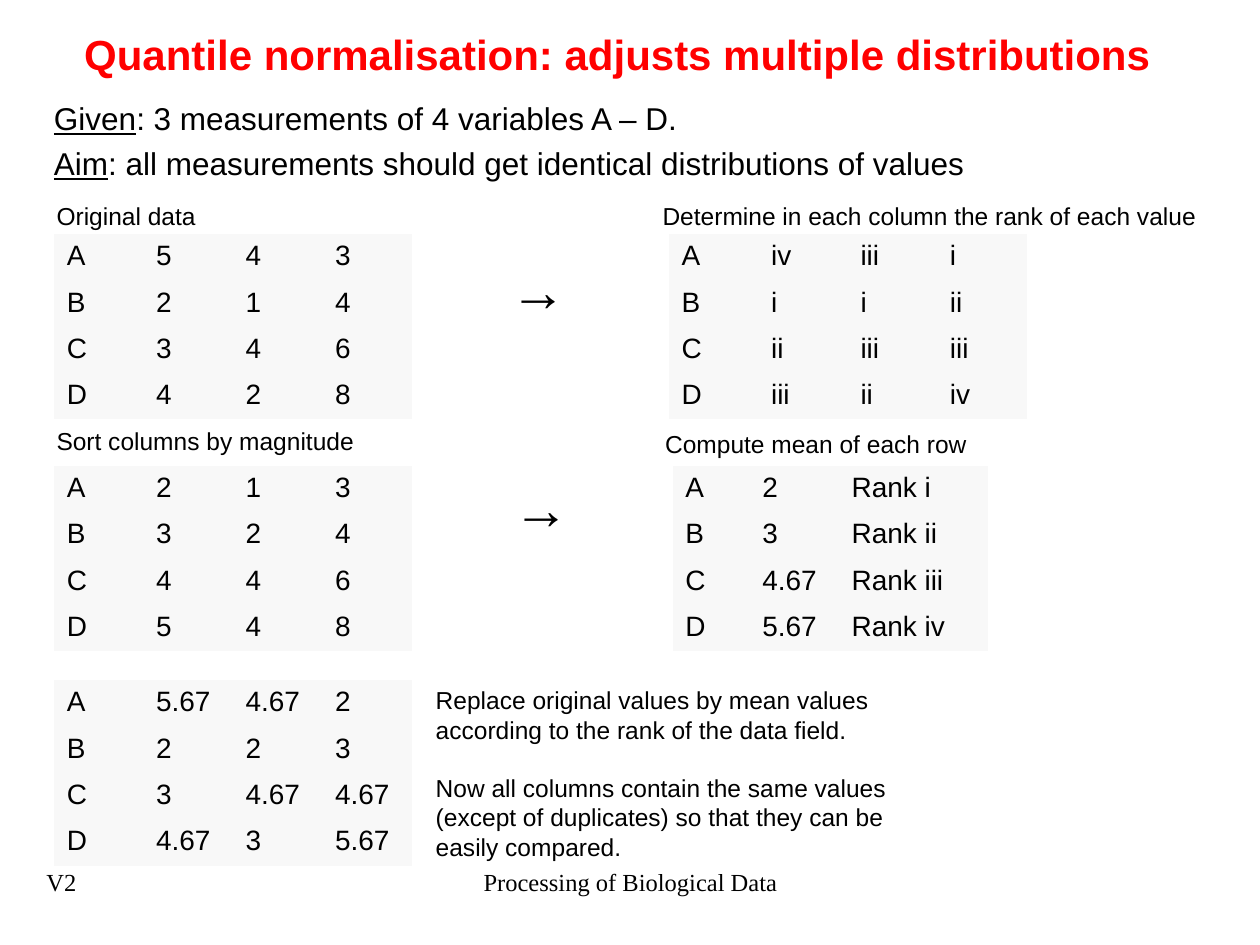
from dataclasses import dataclass

from pptx import Presentation
from pptx.dml.color import RGBColor as Color
from pptx.enum.text import MSO_ANCHOR as Anchor, MSO_AUTO_SIZE as AutoSize, PP_ALIGN as Align
from pptx.oxml.ns import qn
from pptx.util import Inches, Pt


@dataclass(frozen=True)
class Theme:
    """Colours, fonts and type sizes of the slide."""
    title_color: Color = Color(0xFF, 0x00, 0x00)
    text_color: Color = Color(0x00, 0x00, 0x00)
    cell_fill: Color = Color(0xF8, 0xF8, 0xF8)
    sans: str = "Arial"
    serif: str = "Times New Roman"
    title_size: int = 24
    lead_size: int = 18
    table_size: int = 16
    note_size: int = 14
    arrow_size: int = 32
    plain_table: str = "{2D5ABB26-0587-4C30-8999-92F81FD0307C}"


class PageBuilder:
    """Adds styled elements to the current slide."""

    def __init__(self, page, theme):
        """Keep the slide and its style."""
        self.page = page
        self.theme = theme

    def style(self, para, size, name=None, color=None):
        """Set the font of a paragraph."""
        para.font.size = Pt(size)
        para.font.name = name or self.theme.sans
        para.font.color.rgb = color or self.theme.text_color

    def title(self, text, left, top, width, height):
        """Place and format the title placeholder."""
        box = self.page.shapes.title
        box.left, box.top, box.width, box.height = map(Inches, (left, top, width, height))
        frame = box.text_frame
        frame.text = text
        frame.vertical_anchor = Anchor.MIDDLE
        frame.auto_size = AutoSize.NONE
        para = frame.paragraphs[0]
        para.alignment = Align.CENTER
        self.style(para, self.theme.title_size, color=self.theme.title_color)
        para.font.bold = True

    def text(self, lines, left, top, width, height, size=None, name=None,
             align=Align.LEFT, wrap=True, gap=0):
        """Add a text box with one paragraph per line and return its frame."""
        box = self.page.shapes.add_textbox(*map(Inches, (left, top, width, height)))
        frame = box.text_frame
        frame.word_wrap = wrap
        frame.text = "\n".join(lines)
        for index, para in enumerate(frame.paragraphs):
            para.alignment = align
            para.space_before = Pt(gap if index else 0)
            self.style(para, size or self.theme.note_size, name)
        return frame

    def lead(self, pairs, left, top, width, height):
        """Add lines that each open with an underlined term."""
        frame = self.text([""] * len(pairs), left, top, width, height, self.theme.lead_size)
        for para, (term, rest) in zip(frame.paragraphs, pairs):
            para.line_spacing = Pt(25.6)
            span = para.add_run()
            span.text = term
            span.font.underline = True
            para.add_run().text = rest

    def arrow(self, left, top):
        """Add an arrow sign between two tables."""
        self.text(["→"], left, top, 0.65, 0.64, self.theme.arrow_size,
                  self.theme.serif, wrap=False)

    def table(self, rows, left, top, widths=(0.71,) * 4, row_height=0.3675):
        """Add a plain table whose rows are lettered from A."""
        size = sum(widths), row_height * len(rows)
        table = self.page.shapes.add_table(
            len(rows), len(widths), *map(Inches, (left, top, *size))).table
        table.first_row = table.horz_banding = False
        table._tbl.tblPr.find(qn("a:tableStyleId")).text = self.theme.plain_table
        for column, width in zip(table.columns, widths):
            column.width = Inches(width)
        for row, letter, values in zip(table.rows, "ABCD", rows):
            for cell, value in zip(row.cells, (letter, *values)):
                cell.text = value
                cell.fill.solid()
                cell.fill.fore_color.rgb = self.theme.cell_fill
                self.style(cell.text_frame.paragraphs[0], self.theme.table_size)


def grid(text):
    """Split comma-separated values, with one row per semicolon."""
    return [row.split(",") for row in text.split(";")]


def main():
    """Build and save the slide."""
    deck = Presentation()
    deck.slide_width, deck.slide_height = Inches(10), Inches(7.5)
    theme = Theme()
    builder = PageBuilder(deck.slides.add_slide(deck.slide_layouts[5]), theme)

    builder.title("Quantile normalisation: adjusts multiple distributions", 0, 0.21, 9.8, 0.43)
    builder.lead([
        ("Given", ": 3 measurements of 4 variables A – D."),
        ("Aim", ": all measurements should get identical distributions of values"),
    ], 0.33, 0.68, 9.42, 0.83)

    for label, left, top, width in (
        ("Original data", 0.35, 1.55, 3.92),
        ("Determine in each column the rank of each value", 5.16, 1.55, 4.65),
        ("Sort columns by magnitude", 0.35, 3.33, 3.92),
        ("Compute mean of each row", 5.18, 3.36, 3.92),
    ):
        builder.text([label], left, top, width, 0.34)

    builder.table(grid("5,4,3;2,1,4;3,4,6;4,2,8"), 0.43, 1.86)
    builder.table(grid("iv,iii,i;i,i,ii;ii,iii,iii;iii,ii,iv"), 5.31, 1.86)
    builder.table(grid("2,1,3;3,2,4;4,4,6;5,4,8"), 0.43, 3.7)
    builder.table(grid("2,Rank i;3,Rank ii;4.67,Rank iii;5.67,Rank iv"),
                  5.34, 3.7, (0.61, 0.71, 1.18))
    builder.table(grid("5.67,4.67,2;2,2,3;3,4.67,4.67;4.67,3,5.67"), 0.43, 5.4)

    builder.arrow(3.95, 1.98)
    builder.arrow(3.98, 3.71)

    builder.text([
        "Replace original values by mean values according to the rank of the data field.",
        "Now all columns contain the same values (except of duplicates) "
        "so that they can be easily compared.",
    ], 3.36, 5.39, 3.92, 1.51, gap=16.5)

    builder.text(["V2"], 0.27, 6.83, 2.56, 0.5, name=theme.serif)
    builder.text(["Processing of Biological Data"], 3.42, 6.83, 3.17, 0.5,
                 name=theme.serif, align=Align.CENTER)
    deck.save("out.pptx")


if __name__ == "__main__":
    main()
